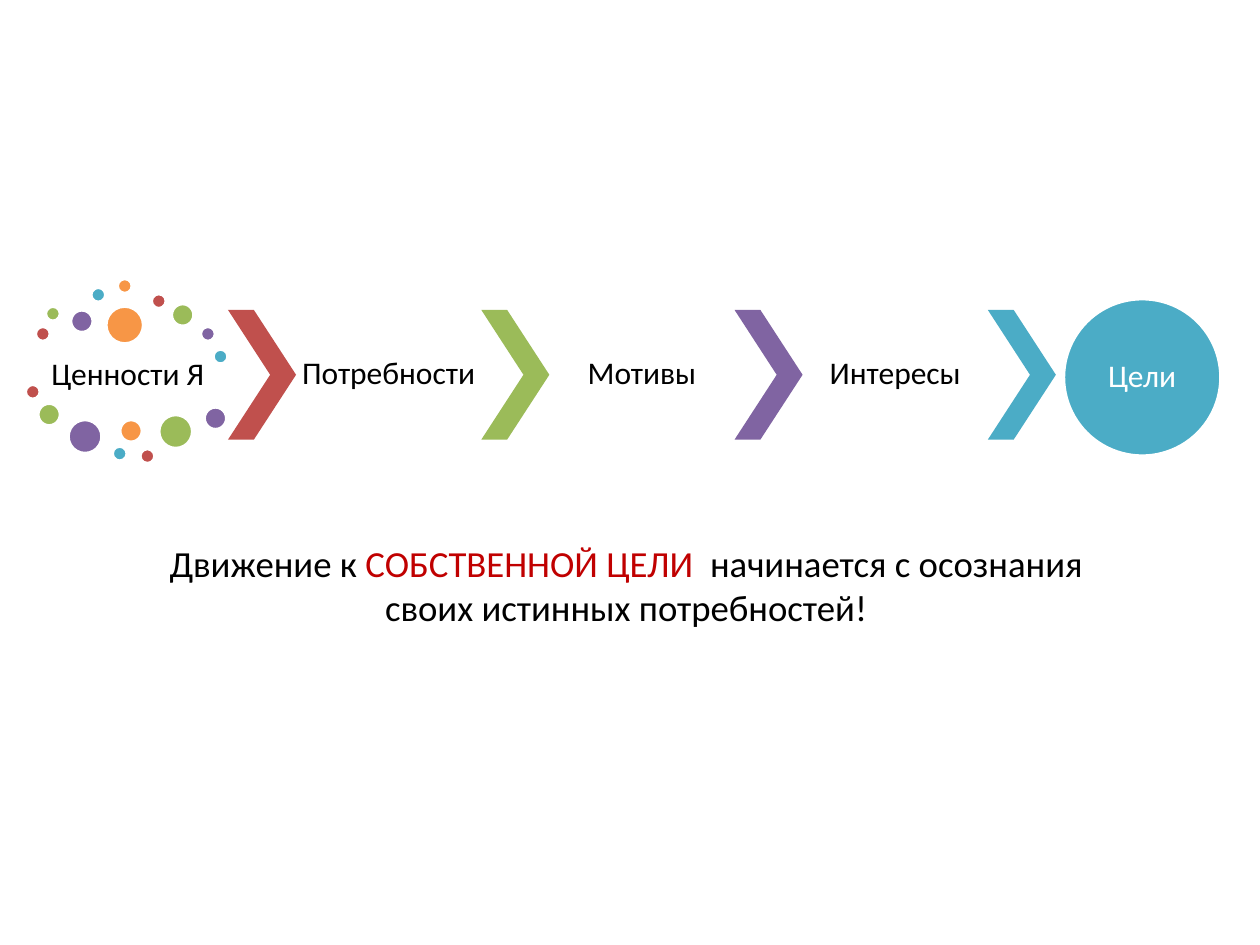
from itertools import cycle

from pptx import Presentation
from pptx.dml.color import RGBColor
from pptx.enum.shapes import MSO_SHAPE
from pptx.enum.text import MSO_ANCHOR, PP_ALIGN
from pptx.util import Inches, Pt

OVAL, CHEVRON = MSO_SHAPE.OVAL, MSO_SHAPE.CHEVRON
TOP, MIDDLE = MSO_ANCHOR.TOP, MSO_ANCHOR.MIDDLE
CENTER = PP_ALIGN.CENTER

BLACK = RGBColor(0x00, 0x00, 0x00)
WHITE = RGBColor(0xFF, 0xFF, 0xFF)
DARK_RED = RGBColor(0xC0, 0x00, 0x00)
RED = RGBColor(0xC0, 0x50, 0x4D)
GREEN = RGBColor(0x9B, 0xBB, 0x59)
PURPLE = RGBColor(0x80, 0x64, 0xA2)
BLUE = RGBColor(0x4B, 0xAC, 0xC6)
ORANGE = RGBColor(0xF7, 0x96, 0x46)
PALETTE = (RED, GREEN, PURPLE, BLUE, ORANGE)

START = "Ценности Я"
STEPS = ("Потребности", "Мотивы", "Интересы")
GOAL = "Цели"
CONCLUSION = (
    ("Движение к ", BLACK),
    ("СОБСТВЕННОЙ ЦЕЛИ ", DARK_RED),
    (" начинается с осознания своих истинных потребностей!", BLACK),
)

SMALL, MEDIUM, LARGE, LARGEST = 0.12, 0.18, 0.27, 0.3
DOTS = (
    (0.28, 2.59, SMALL), (0.36, 2.43, SMALL), (0.56, 2.46, MEDIUM),
    (0.72, 2.28, SMALL), (0.93, 2.21, SMALL), (1.2, 2.33, SMALL),
    (1.36, 2.41, MEDIUM), (1.59, 2.59, SMALL), (1.69, 2.77, SMALL),
    (0.84, 2.43, LARGEST), (0.2, 3.05, SMALL), (0.3, 3.2, MEDIUM),
    (0.54, 3.33, LARGE), (0.89, 3.54, SMALL), (0.95, 3.33, MEDIUM),
    (1.11, 3.56, SMALL), (1.26, 3.29, LARGE), (1.62, 3.23, MEDIUM),
)

FLOW_LEFT, FLOW_TOP, FLOW_HEIGHT = 1.81, 2.46, 1.03
CHEVRON_WIDTH, LABEL_WIDTH = 0.54, 1.47
PITCH = CHEVRON_WIDTH + LABEL_WIDTH
LABEL_MARGINS = (0.03, 0.03)


def add_figure(slide, kind, box, color, outlined=False):
    shape = slide.shapes.add_shape(kind, *map(Inches, box))
    shape.shadow.inherit = False
    shape.fill.solid()
    shape.fill.fore_color.rgb = color
    if outlined:
        shape.line.color.rgb = WHITE
        shape.line.width = Pt(2)
    else:
        shape.line.fill.background()
    return shape


def write(shape, runs, size, margins, anchor=MIDDLE, spacing=0.9):
    frame = shape.text_frame
    horizontal, vertical = map(Inches, margins)
    frame_format = {
        "word_wrap": True, "vertical_anchor": anchor,
        "margin_left": horizontal, "margin_right": horizontal,
        "margin_top": vertical, "margin_bottom": vertical,
    }
    for name, value in frame_format.items():
        setattr(frame, name, value)
    paragraph = frame.paragraphs[0]
    paragraph.alignment = CENTER
    paragraph.line_spacing = spacing
    for text, color in runs:
        run = paragraph.add_run()
        run.text = text
        run.font.name = "Calibri"
        run.font.size = Pt(size)
        run.font.color.rgb = color


def add_label(slide, box, text):
    label = slide.shapes.add_textbox(*map(Inches, box))
    write(label, [(text, BLACK)], 18, LABEL_MARGINS)


def main():
    presentation = Presentation()
    presentation.slide_width, presentation.slide_height = Inches(10), Inches(7.5)
    slide = presentation.slides.add_slide(presentation.slide_layouts[6])

    add_label(slide, (0.28, 2.74, LABEL_WIDTH, 0.48), START)
    for (left, top, size), color in zip(DOTS, cycle(PALETTE)):
        add_figure(slide, OVAL, (left, top, size, size), color, outlined=True)

    for index, color in enumerate(PALETTE[:len(STEPS) + 1]):
        left = FLOW_LEFT + index * PITCH
        chevron = add_figure(slide, CHEVRON, (left, FLOW_TOP, CHEVRON_WIDTH, FLOW_HEIGHT), color)
        chevron.adjustments[0] = 0.62
    for index, text in enumerate(STEPS):
        left = FLOW_LEFT + CHEVRON_WIDTH + index * PITCH
        add_label(slide, (left, FLOW_TOP, LABEL_WIDTH, FLOW_HEIGHT), text)

    goal = add_figure(slide, OVAL, (8.44, 2.37, 1.25, 1.25), BLUE, outlined=True)
    write(goal, [(GOAL, WHITE)], 18, (0, 0))

    conclusion = slide.shapes.add_textbox(*map(Inches, (1.12, 4.25, 7.7, 0.78)))
    write(conclusion, CONCLUSION, 21, (0.07, 0.04), TOP, 1.0)

    presentation.save("out.pptx")


if __name__ == "__main__":
    main()
